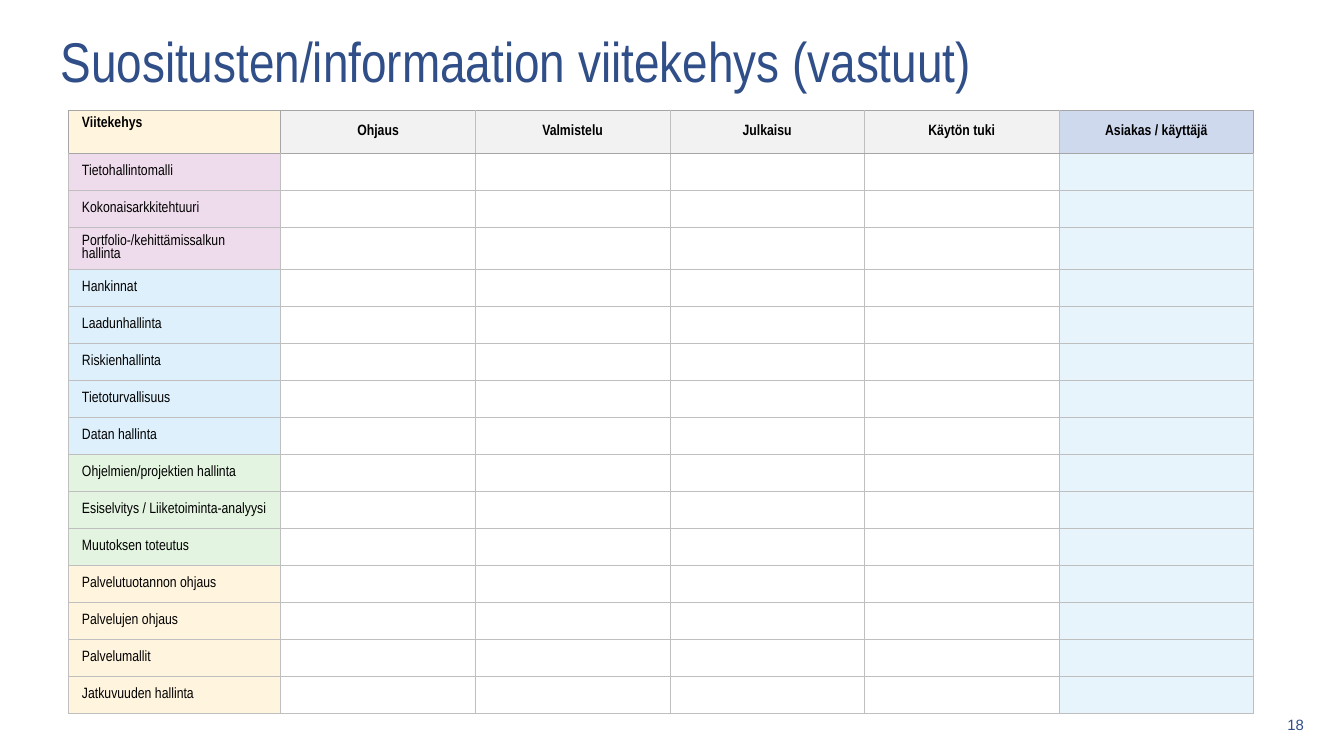
from lxml import etree
from pptx import Presentation, util as u
from pptx.dml.color import RGBColor
from pptx.enum import text
from pptx.oxml import ns

COLORS = {
    "blue": "304E88", "black": "000000", "white": "FFFFFF",
    "grey": "F2F2F2", "user_head": "CFD9EE", "user": "E8F4FC",
    "cream": "FFF4DD", "pink": "EEDBEB", "sky": "DEF0FB", "green": "E3F4E0",
    "head_line": "A6A6A6", "line": "BFBFBF",
}
HEADERS = ["Viitekehys", "Ohjaus", "Valmistelu", "Julkaisu", "Käytön tuki",
           "Asiakas / käyttäjä"]
GROUPS = [
    ("pink", ["Tietohallintomalli", "Kokonaisarkkitehtuuri",
              "Portfolio-/kehittämissalkun hallinta"]),
    ("sky", ["Hankinnat", "Laadunhallinta", "Riskienhallinta",
             "Tietoturvallisuus", "Datan hallinta"]),
    ("green", ["Ohjelmien/projektien hallinta",
               "Esiselvitys / Liiketoiminta-analyysi", "Muutoksen toteutus"]),
    ("cream", ["Palvelutuotannon ohjaus", "Palvelujen ohjaus",
               "Palvelumallit", "Jatkuvuuden hallinta"]),
]
TALL_ROW = 3  # the framework whose name takes two lines
LEFT, CENTER, RIGHT = (text.PP_ALIGN.LEFT, text.PP_ALIGN.CENTER,
                       text.PP_ALIGN.RIGHT)
TOP, MIDDLE = text.MSO_ANCHOR.TOP, text.MSO_ANCHOR.MIDDLE


def write(tf, words, size=8, font="Arial Narrow", color="black", bold=False,
          align=LEFT, spacing=None):
    tf.word_wrap = True
    p = tf.paragraphs[0]
    p.alignment = align
    if spacing:
        p.line_spacing = spacing
    r = p.add_run()
    r.text = words
    r.font.size, r.font.name, r.font.bold = u.Pt(size), font, bold
    r.font.color.rgb = RGBColor.from_string(COLORS[color])


def place(sp, left, top, width, height):
    sp.left, sp.top = u.Inches(left), u.Inches(top)
    sp.width, sp.height = u.Inches(width), u.Inches(height)
    sp.text_frame.vertical_anchor = MIDDLE


def paint(cell, fill, **lines):
    """Fill a cell and draw its borders, given as L, R, T and B."""
    tc_pr = cell._tc.get_or_add_tcPr()
    for side in "LRTB":
        ln = etree.SubElement(tc_pr, ns.qn(f"a:ln{side}"), w=str(u.Pt(0.5)))
        solid = etree.SubElement(ln, ns.qn("a:solidFill"))
        etree.SubElement(solid, ns.qn("a:srgbClr"),
                         val=COLORS[lines.get(side, "line")])
    cell.fill.solid()
    cell.fill.fore_color.rgb = RGBColor.from_string(COLORS[fill])


def add_title(s, words, left, top, width, height):
    sp = s.shapes.title
    place(sp, left, top, width, height)
    sp.text_frame.auto_size = text.MSO_AUTO_SIZE.NONE
    write(sp.text_frame, words, size=30, color="blue")


def add_page_number(s, number, left, top, width, height):
    sp = s.shapes.add_textbox(0, 0, 0, 0)
    place(sp, left, top, width, height)
    write(sp.text_frame, number, font="Arial", color="blue", align=RIGHT)


def add_framework_table(s, left, top, width, height):
    rows = [(fill, name) for fill, names in GROUPS for name in names]
    last = len(HEADERS) - 1
    table = s.shapes.add_table(
        len(rows) + 1, len(HEADERS), u.Inches(left), u.Inches(top),
        u.Inches(width), u.Inches(height)).table
    table.first_row = table.horz_banding = False

    # Grid: a wide name column, then equal columns
    name_width = 1.58
    for i, col in enumerate(table.columns):
        col.width = u.Inches(name_width if i == 0
                             else (width - name_width) / last)
    for i, row in enumerate(table.rows):
        row.height = u.Pt({0: 23, TALL_ROW: 22.5}.get(i, 19.85))

    # Header row
    for i, name in enumerate(HEADERS):
        cell = table.cell(0, i)
        write(cell.text_frame, name, bold=True, align=CENTER if i else LEFT,
              spacing=0.9)
        cell.vertical_anchor = MIDDLE if i else TOP
        edges = {"T": "head_line", "B": "head_line"}
        if i <= 1:
            edges["L"] = "head_line"
        if i in (0, last):
            edges["R"] = "head_line"
        paint(cell, {0: "cream", last: "user_head"}.get(i, "grey"), **edges)

    # Framework rows: a name, then empty cells to fill in
    for i, (fill, name) in enumerate(rows, 1):
        edges = {"T": "head_line"} if i == 1 else {}
        for j in range(len(HEADERS)):
            cell = table.cell(i, j)
            if j == 0:
                write(cell.text_frame, name, spacing=0.9)
                cell.vertical_anchor = MIDDLE
                cell.margin_right = u.Inches(0.15 if i == TALL_ROW else 0.05)
            else:
                p = cell.text_frame.paragraphs[0]
                etree.SubElement(p._p, ns.qn("a:endParaRPr"), sz="800")
            paint(cell, {0: fill, last: "user"}.get(j, "white"), **edges)


def main():
    prs = Presentation()
    prs.slide_width = u.Inches(10)
    prs.slide_height = prs.slide_width * 9 // 16
    s = prs.slides.add_slide(prs.slide_layouts[5])
    add_title(s, "Suositusten/informaation viitekehys (vastuut)",
              0.35, 0.12, 9.25, 0.66)
    add_framework_table(s, 0.51, 0.82, 8.82, 4.5)
    add_page_number(s, "18", 9.28, 5.27, 0.52, 0.24)
    prs.save("out.pptx")


if __name__ == "__main__":
    main()
